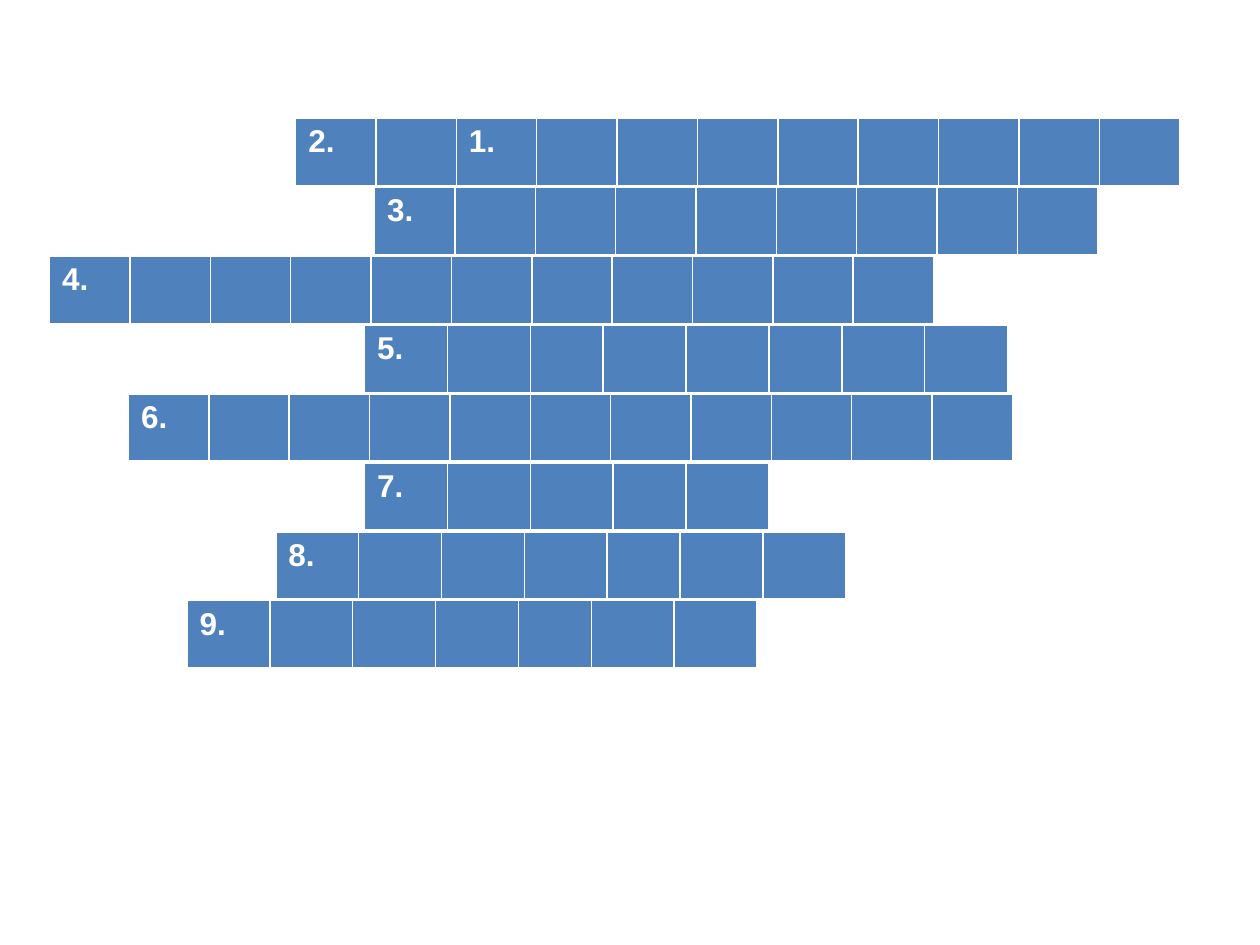
from lxml import etree
from pptx import Presentation
from pptx.dml.color import RGBColor
from pptx.oxml import ns
from pptx.util import Cm, Pt

COLORS = {"cell": "4F81BD", "line": "FFFFFF", "number": "FFFFFF"}
BORDERS = {"lnL": 1, "lnR": 1, "lnT": 1, "lnB": 3}
ROW_HEIGHT = 1.39
WIDE, NARROW, EVEN = 1.67, 1.47, 1.62
CROSSWORD_LEFT, CROSSWORD_TOP = 1, 2.38
WORDS = [
    (4.96, [EVEN] * 11, {0: "2.", 2: "1."}),
    (6.55, [EVEN] * 9, {0: "3."}),
    (0, [EVEN] * 11, {0: "4."}),
    (6.35, [WIDE, WIDE, NARROW] * 2 + [WIDE] * 2, {0: "5."}),
    (1.59, [EVEN] * 11, {0: "6."}),
    (6.35, [WIDE] * 3 + [NARROW, WIDE], {0: "7."}),
    (4.56, [WIDE] * 4 + [NARROW] + [WIDE] * 2, {0: "8."}),
    (2.77, [WIDE] * 4 + [NARROW] + [WIDE] * 2, {0: "9."}),
]


def add_borders(cell):
    """Draw the four border lines of a table cell."""
    properties = cell._tc.get_or_add_tcPr()
    for index, (tag, width) in enumerate(BORDERS.items()):
        line = etree.Element(ns.qn(f"a:{tag}"), w=str(Pt(width)))
        fill = etree.SubElement(line, ns.qn("a:solidFill"))
        etree.SubElement(fill, ns.qn("a:srgbClr"), val=COLORS["line"])
        properties.insert(index, line)


def add_number(cell, number):
    """Write a clue number in a cell."""
    run = cell.text_frame.paragraphs[0].add_run()
    run.text = number
    run.font.name = "Arial"
    run.font.size = Pt(18)
    run.font.bold = True
    run.font.color.rgb = RGBColor.from_string(COLORS["number"])


def add_word(slide, left, top, widths, numbers):
    """Place one crossword word as a single-row table."""
    table = slide.shapes.add_table(
        1, len(widths), Cm(left), Cm(top), Cm(sum(widths)), Cm(ROW_HEIGHT)
    ).table
    for index, width in enumerate(widths):
        table.columns[index].width = Cm(width)
        cell = table.cell(0, index)
        cell.fill.solid()
        cell.fill.fore_color.rgb = RGBColor.from_string(COLORS["cell"])
        add_borders(cell)
        if index in numbers:
            add_number(cell, numbers[index])


def add_crossword(slide, left, top):
    """Stack the words of the crossword from its top left corner."""
    for row, (offset, widths, numbers) in enumerate(WORDS):
        add_word(slide, left + offset, top + row * ROW_HEIGHT, widths, numbers)


def main():
    """Build and save the presentation."""
    presentation = Presentation()
    presentation.slide_width = Cm(25.4)
    presentation.slide_height = Cm(19.05)
    slide = presentation.slides.add_slide(presentation.slide_layouts[6])
    add_crossword(slide, CROSSWORD_LEFT, CROSSWORD_TOP)
    presentation.save("out.pptx")


if __name__ == "__main__":
    main()
